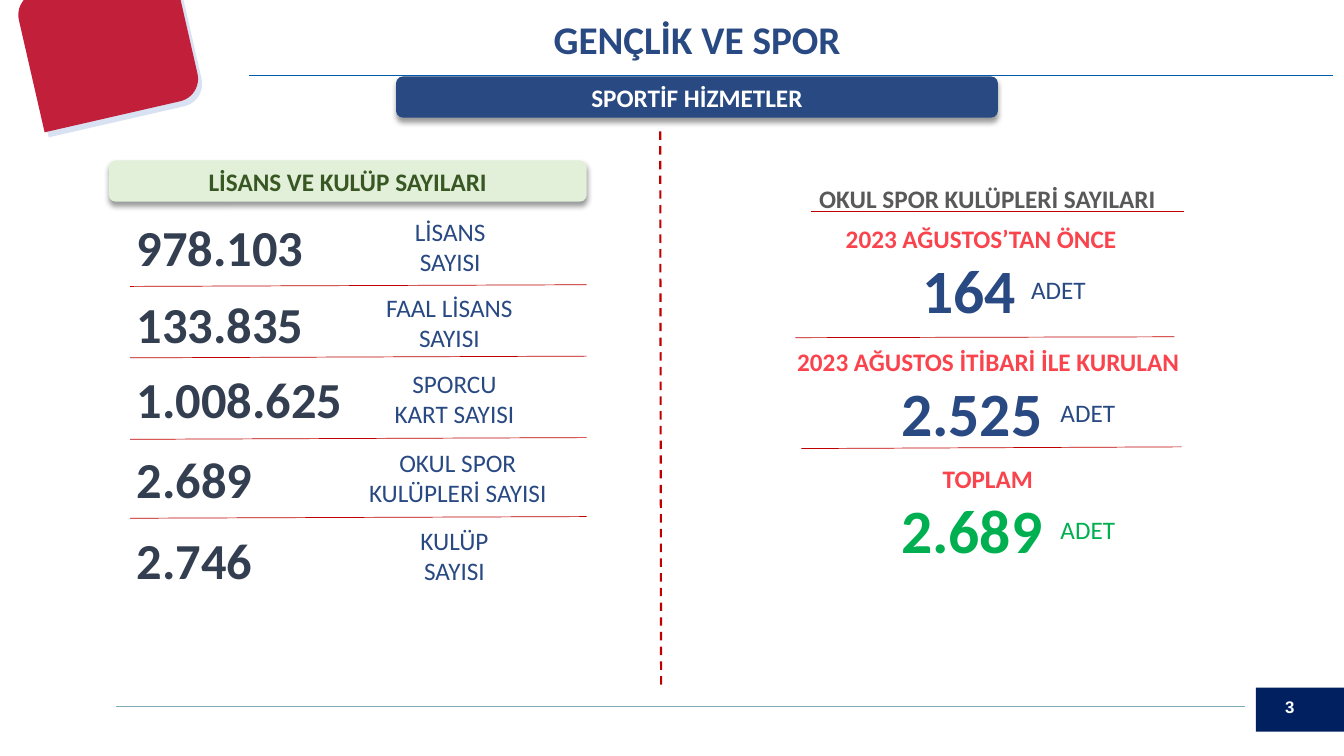
import pptx
import pptx.util
import pptx.dml.color
import pptx.enum.dml
import pptx.enum.shapes
import pptx.enum.text
import pptx.oxml
import pptx.oxml.ns

Kind = pptx.enum.shapes.MSO_SHAPE
Align = pptx.enum.text.PP_ALIGN
Size = pptx.enum.text.MSO_AUTO_SIZE
COLS, ROWS = 160, 90
HUES = {
    "navy": "294983", "deep": "002060", "red": "C21F3A", "haze": "4472C4",
    "rule": "C00000", "teal": "81ABB8", "blue": "005AAA", "slate": "333F50",
    "mint": "E2F0D9", "leaf": "385723", "green": "00B050", "grey": "595959",
    "coral": "FA444D", "white": "FFFFFF",
}

deck = pptx.Presentation()
deck.slide_width = pptx.util.Inches(13.33)
deck.slide_height = pptx.util.Inches(7.5)
slide = deck.slides.add_slide(deck.slide_layouts[6])
col = deck.slide_width / COLS
row = deck.slide_height / ROWS


def tint(name):
    return pptx.dml.color.RGBColor.from_string(HUES[name])


def block(box, text, size, hue, bold=True, align=Align.CENTER, wrap=True,
          font="Calibri", fill=None, kind=Kind.ROUNDED_RECTANGLE):
    """Place text in grid units: a filled shape if fill is given, else a text box."""
    x, y, w, h = box
    place = [int(n) for n in (x * col, y * row, w * col, h * row)]
    if fill:
        shape = slide.shapes.add_shape(kind, *place)
        shape.shadow.inherit = False
        shape.fill.solid()
        shape.fill.fore_color.rgb = tint(fill)
        shape.line.fill.background()
    else:
        shape = slide.shapes.add_textbox(*place)
        shape.text_frame.auto_size = Size.SHAPE_TO_FIT_TEXT
    frame = shape.text_frame
    frame.word_wrap = wrap
    if text:
        frame.text = text
    for par in frame.paragraphs:
        par.alignment = align
        par.font.size = pptx.util.Pt(size)
        par.font.name = font
        par.font.bold = bold
        par.font.color.rgb = tint(hue)
    return shape


# Rules: start, end, colour, width
rules = [
    (13.8, 84.1, 148.2, 84.1, "teal", 0.75),
    (29.65, 9, 158.65, 9, "blue", 1),
    (78.7, 81.5, 78.6, 15.4, "rule", 1.5),
    (96.5, 25.2, 141, 25.2, "rule", 0.5),
    (94.7, 40.2, 139.8, 40.1, "rule", 0.5),
    (95.4, 53.4, 140.65, 53.2, "rule", 0.5),
]
rules += [(15.5, y, 69.85, y - 0.2, "rule", 0.5) for y in (34.1, 42.6, 52.3, 61.7)]
for x1, y1, x2, y2, hue, width in rules:
    line = slide.shapes.add_connector(
        pptx.enum.shapes.MSO_CONNECTOR.STRAIGHT,
        int(x1 * col), int(y1 * row), int(x2 * col), int(y2 * row))
    line.line.color.rgb = tint(hue)
    line.line.width = pptx.util.Pt(width)
    if width == 1.5:
        line.line.dash_style = pptx.enum.dml.MSO_LINE.DASH
    pptx.oxml.ns.qn("a:effectLst")
    line._element.spPr.append(pptx.oxml.parse_xml(
        f'<a:effectLst {pptx.oxml.ns.nsdecls("a")}/>'))

# Corner tile over its pale shade
for x, y, hue in ((3.72, -2.04, "haze"), (3.24, -2.64, "red")):
    tile = block((x, y, 19.3, 16.45), "", 18, "white", fill=hue,
                 kind=Kind.ROUND_2_DIAG_RECTANGLE)
    tile.rotation = 347.1
    if hue == "haze":
        tone = tile._element.spPr.find(".//" + pptx.oxml.ns.qn("a:srgbClr"))
        tone.append(pptx.oxml.parse_xml(
            f'<a:alpha {pptx.oxml.ns.nsdecls("a")} val="20000"/>'))

# Title, page number and heading bars
block((149.5, 81.85, 10.5, 5.25), "", 12, "white", fill="deep", kind=Kind.RECTANGLE)
block((151.8, 82.3, 11.9, 3.6), "3", 12, "white", align=Align.LEFT, font="Arial")
block((18.6, 1.2, 128.75, 6.85), "GENÇLİK VE SPOR", 28, "navy")
bars = [
    ((47.15, 9.1, 71.65, 4.9), "SPORTİF HİZMETLER", "white", "navy"),
    ((12.95, 19.1, 56.9, 4.9), "LİSANS VE KULÜP SAYILARI", "leaf", "mint"),
]
for box, text, hue, fill in bars:
    bar = block(box, text, 18, hue, fill=fill)
    bar.text_frame.vertical_anchor = pptx.enum.text.MSO_ANCHOR.MIDDLE
    effect = bar._element.spPr.find(pptx.oxml.ns.qn("a:effectLst"))
    effect.append(pptx.oxml.parse_xml(
        f'<a:outerShdw {pptx.oxml.ns.nsdecls("a")} blurRad="50800" dist="38100" '
        'dir="5400000" algn="t" rotWithShape="0"><a:srgbClr val="000000">'
        '<a:alpha val="40000"/></a:srgbClr></a:outerShdw>'))

# Left column: count, its top, label, label centre, top and width
counts = [
    ("978.103", 25.1, "LİSANS\nSAYISI", 53.6, 25.1, 22.4),
    ("133.835", 34.3, "FAAL LİSANS\nSAYISI", 53.5, 34.2, 18.2),
    ("1.008.625", 43.2, "SPORCU KART SAYISI", 54.1, 43.2, 18.2),
    ("2.689", 52.7, "OKUL SPOR\nKULÜPLERİ SAYISI", 54.5, 52.6, 29.8),
    ("2.746", 62.4, "KULÜP\nSAYISI", 54.1, 61.9, 18.2),
]
for count, top, label, mid, y, wide in counts:
    block((15.1, top, 27.1, 8.5), count, 36, "slate", align=Align.LEFT, wrap=False)
    block((mid - wide / 2, y, wide, 8.5), label, 18, "navy", bold=False)

# Right column: heading, its centre and top, count, its left and width, unit centre, colour
block((91.7, 21.25, 51.7, 4.8), "OKUL SPOR KULÜPLERİ SAYILARI", 18, "grey")
clubs = [
    ("2023 AĞUSTOS’TAN ÖNCE", 116.8, 26, "164", 108.6, 13.7, 126, "navy"),
    ("2023 AĞUSTOS İTİBARİ İLE KURULAN", 117.65, 40.6, "2.525", 106.1, 19.4, 129.5, "navy"),
    ("TOPLAM", 117.6, 54.6, "2.689", 106.1, 19.4, 129.5, "green"),
]
for head, mid, top, count, left, wide, unit, hue in clubs:
    block((mid - 24.2, top, 48.4, 4.8), head, 18, "coral", wrap=False)
    block((left, top + 3.4, wide, 10.1), count, 44, hue, align=Align.LEFT, wrap=False)
    block((unit - 9.1, top + 6.1, 18.2, 4.8), "ADET", 18, hue, bold=False)

deck.save("out.pptx")
